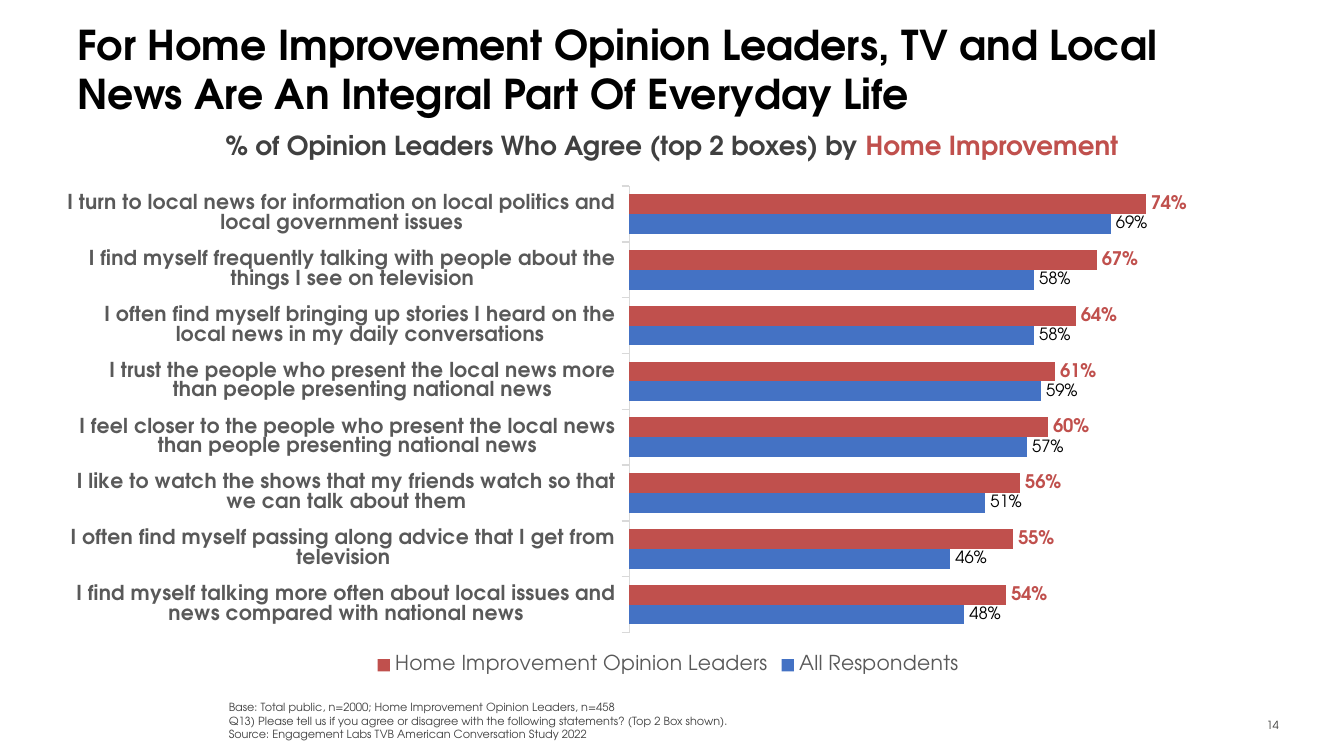
from dataclasses import dataclass

from lxml.etree import SubElement
from pptx import Presentation
from pptx.chart.data import CategoryChartData
from pptx.dml.color import RGBColor as RGB
from pptx.enum.chart import XL_CHART_TYPE as CT, XL_LABEL_POSITION as LP
from pptx.enum.chart import XL_LEGEND_POSITION as LG, XL_TICK_LABEL_POSITION as TL
from pptx.enum.chart import XL_TICK_MARK as TM
from pptx.enum.text import MSO_ANCHOR as ANCHOR, PP_ALIGN as ALIGN
from pptx.oxml.ns import qn
from pptx.util import Pt

PX = 9525


@dataclass(frozen=True)
class Theme:
    """Colours, typeface and type sizes of the slide."""
    face: str = "TeX Gyre Adventor"
    black: str = "000000"
    dark: str = "404040"
    number: str = "3C3C3A"
    grey: str = "595959"
    rule: str = "D9D9D9"
    red: str = "C0504D"
    blue: str = "4472C4"
    title: int = 22
    subtitle: int = 14
    axis: int = 11
    leader_label: int = 10
    base_label: int = 9
    note: int = 6


T = Theme()

STATEMENTS = [
    ("I find myself talking more often about local issues and news compared with national news", 0.48, 0.54),
    ("I often find myself passing along advice that I get from television", 0.46, 0.55),
    ("I like to watch the shows that my friends watch so that we can talk about them", 0.51, 0.56),
    ("I feel closer to the people who present the local news than people presenting national news", 0.57, 0.60),
    ("I trust the people who present the local news more than people presenting national news", 0.59, 0.61),
    ("I often find myself bringing up stories I heard on the local news in my daily conversations", 0.58, 0.64),
    ("I find myself frequently talking with people about the things I see on television", 0.58, 0.67),
    ("I turn to local news for information on local politics and local government issues", 0.69, 0.74),
]

NOTES = [
    "Base: Total public, n=2000; Home Improvement Opinion Leaders, n=458",
    "Q13) Please tell us if you agree or disagree with the following statements? (Top 2 Box shown).",
    "Source: Engagement Labs TVB American Conversation Study 2022",
]


def emu(box):
    """Turn a px box into EMU."""
    return [v * PX for v in box]


def style(font, size, color, bold=False):
    """Set typeface, size, colour and weight."""
    font.name, font.size, font.bold = T.face, Pt(size), bold
    font.color.rgb = RGB.from_string(color)


def add_text(s, box, paras, size, bold=False, align=ALIGN.LEFT, anchor=ANCHOR.TOP, wrap=True):
    """Add a text box whose paragraphs are lists of (text, colour) runs."""
    tf = s.shapes.add_textbox(*emu(box)).text_frame
    tf.word_wrap, tf.vertical_anchor = wrap, anchor
    for i, runs in enumerate(paras):
        p = tf.add_paragraph() if i else tf.paragraphs[0]
        p.alignment = align
        for text, color in runs:
            r = p.add_run()
            r.text = text
            style(r.font, size, color, bold)
    return tf


def add_heading(s, title_box, subtitle_box):
    """Place the title and the chart heading below it."""
    title = "For Home Improvement Opinion Leaders, TV and Local News Are An Integral Part Of Everyday Life"
    tf = add_text(s, title_box, [[(title, T.black)]], T.title, bold=True)
    tf.margin_top = 0
    runs = [("% of Opinion Leaders Who Agree (top 2 boxes) by ", T.dark), ("Home Improvement", T.red)]
    add_text(s, subtitle_box, [runs], T.subtitle, bold=True, align=ALIGN.CENTER, wrap=False)


def set_plot_box(chart, size, box):
    """Fix the inner plot area, a px box within a chart of the given size."""
    area = chart._chartSpace.chart.plotArea
    for old in area.findall(qn("c:layout")):
        area.remove(old)
    layout = SubElement(area, qn("c:layout"))
    area.insert(0, layout)
    manual = SubElement(layout, qn("c:manualLayout"))
    fractions = {tag: v / full for tag, v, full in zip("xywh", box, size * 2)}
    values = {"layoutTarget": "inner", "xMode": "edge", "yMode": "edge", **fractions}
    for tag, value in values.items():
        SubElement(manual, qn(f"c:{tag}")).set("val", str(value))


def style_series(ser, color, label_color, size, bold):
    """Colour one series and its value labels."""
    ser.format.fill.solid()
    ser.format.fill.fore_color.rgb = RGB.from_string(color)
    labels = ser.data_labels
    labels.show_value, labels.position = True, LP.OUTSIDE_END
    labels.number_format, labels.number_format_is_linked = "0%", False
    style(labels.font, size, label_color, bold)


def add_agreement_chart(s, box):
    """Place the bar chart of agreement by statement."""
    names, base, leaders = zip(*STATEMENTS)
    data = CategoryChartData(number_format="0%")
    data.categories = names
    data.add_series("All Respondents", base)
    data.add_series("Home Improvement Opinion Leaders", leaders)
    chart = s.shapes.add_chart(CT.BAR_CLUSTERED, *emu(box), data).chart
    style(chart.font, T.leader_label, T.black)
    chart.has_title = False
    set_plot_box(chart, box[2:], (397, 3, 453, 319))

    plot = chart.plots[0]
    plot.gap_width, plot.overlap, plot.vary_by_categories = 82, 0, False
    style_series(plot.series[0], T.blue, T.black, T.base_label, False)
    style_series(plot.series[1], T.red, T.red, T.leader_label, True)

    cat = chart.category_axis
    cat.major_tick_mark, cat.minor_tick_mark = TM.OUTSIDE, TM.NONE
    cat.tick_label_position = TL.NEXT_TO_AXIS
    cat.format.line.color.rgb = RGB.from_string(T.rule)
    cat.format.line.width = Pt(0.75)
    style(cat.tick_labels.font, T.axis, T.grey, True)

    val = chart.value_axis
    val.minimum_scale, val.maximum_scale = 0, 0.9
    val.has_major_gridlines, val.visible = False, False

    chart.has_legend = True
    chart.legend.position, chart.legend.include_in_layout = LG.BOTTOM, False
    style(chart.legend.font, T.axis, T.grey)


def add_footer(s, notes_box, number_box):
    """Place the source notes and the slide number."""
    add_text(s, notes_box, [[(n, T.dark)] for n in NOTES], T.note, anchor=ANCHOR.BOTTOM)
    add_text(s, number_box, [[("14", T.number)]], T.note, align=ALIGN.RIGHT, anchor=ANCHOR.MIDDLE)


def main():
    """Build and save the slide."""
    prs = Presentation()
    prs.slide_width, prs.slide_height = 960 * PX, 540 * PX
    s = prs.slides.add_slide(prs.slide_layouts[6])
    add_heading(s, (46, 14, 869, 90), (142, 88, 676, 33))
    add_agreement_chart(s, (48, 130, 850, 356))
    add_footer(s, (154, 495, 664, 39), (866, 503, 57, 29))
    prs.save("out.pptx")


if __name__ == "__main__":
    main()
